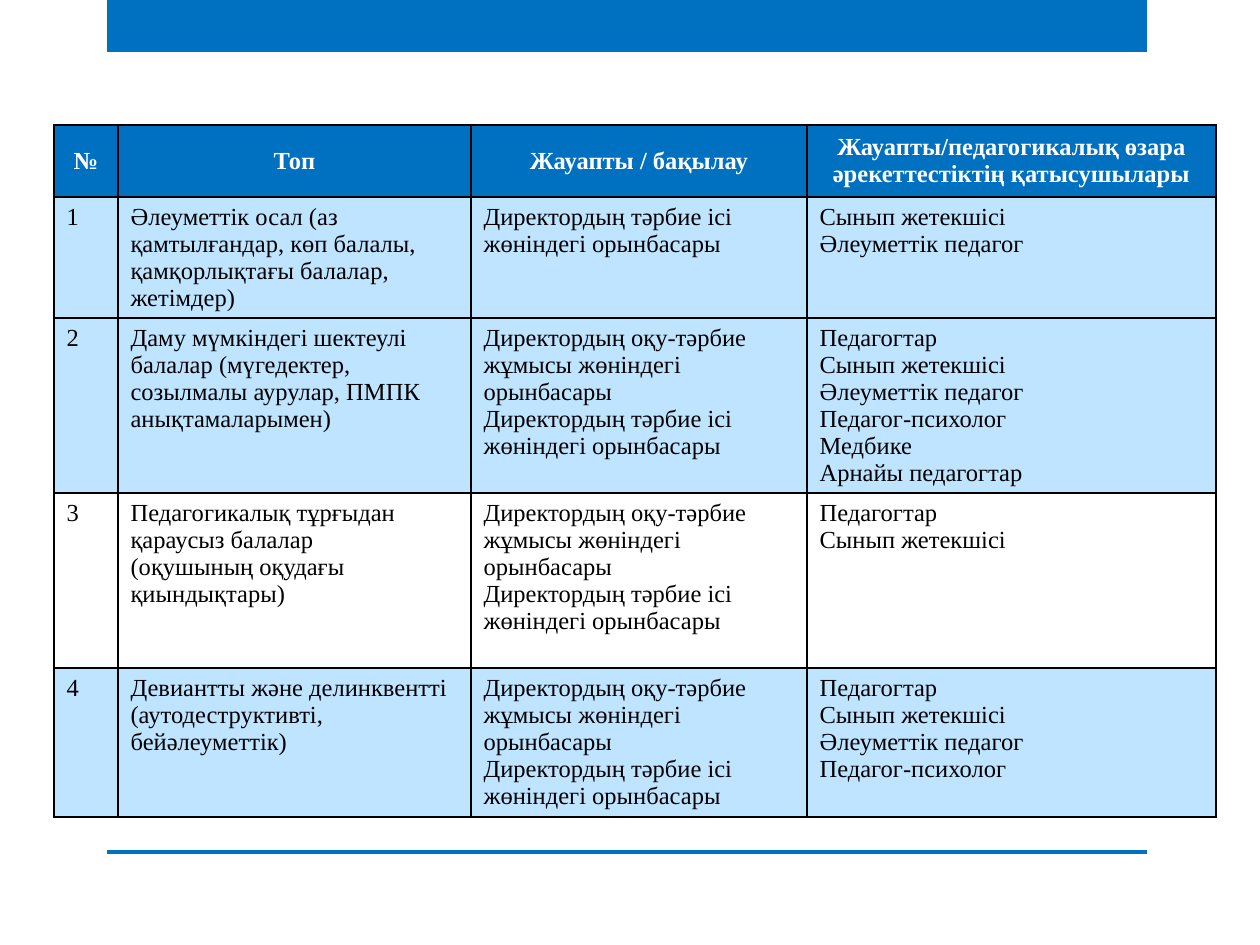
import pptx
import pptx.dml.color
import pptx.enum.shapes
import pptx.enum.text
import pptx.util
from lxml import etree

EMU_PER_PX = 914400 / 126
BLUE, PALE_BLUE, WHITE, BLACK = "0070C0", "BFE4FF", "FFFFFF", "000000"
DRAWING_NS = "http://schemas.openxmlformats.org/drawingml/2006/main"

COLUMN_WIDTHS = [64, 353, 336, 409]
ROW_HEIGHTS = [72, 121, 175, 175, 149]
ROW_FILLS = [BLUE, PALE_BLUE, PALE_BLUE, WHITE, PALE_BLUE]

# Wording shared by several rows
STUDY_DEPUTY = "Директордың оқу-тәрбие жұмысы жөніндегі орынбасары"
CARE_DEPUTY = "Директордың тәрбие ісі жөніндегі орынбасары"
BOTH_DEPUTIES = [STUDY_DEPUTY, CARE_DEPUTY]
TEACHERS = "Педагогтар"
CLASS_TEACHER = "Сынып жетекшісі"
SOCIAL_TEACHER = "Әлеуметтік педагог"
PSYCHOLOGIST = "Педагог-психолог"

# Each cell is a list of paragraphs
HEADINGS = [["№"], ["Топ"], ["Жауапты / бақылау"],
            ["Жауапты/педагогикалық өзара әрекеттестіктің қатысушылары"]]
GROUPS = [
    [["1"],
     ["Әлеуметтік осал (аз қамтылғандар, көп балалы, қамқорлықтағы балалар, жетімдер)"],
     [CARE_DEPUTY],
     [CLASS_TEACHER, SOCIAL_TEACHER]],
    [["2"],
     ["Даму мүмкіндегі шектеулі балалар (мүгедектер, созылмалы аурулар, ПМПК анықтамаларымен)"],
     BOTH_DEPUTIES,
     [TEACHERS, CLASS_TEACHER, SOCIAL_TEACHER, PSYCHOLOGIST, "Медбике", "Арнайы педагогтар"]],
    [["3"],
     ["Педагогикалық тұрғыдан қараусыз балалар", "(оқушының оқудағы қиындықтары)"],
     BOTH_DEPUTIES,
     [TEACHERS, CLASS_TEACHER]],
    [["4"],
     ["Девиантты және делинквентті (аутодеструктивті, бейәлеуметтік)"],
     BOTH_DEPUTIES,
     [TEACHERS, CLASS_TEACHER, SOCIAL_TEACHER, PSYCHOLOGIST]],
]

BODY_FONT = {"name": "Times New Roman", "size": pptx.util.Pt(14), "bold": False}
HEADING_FONT = {**BODY_FONT, "bold": True}


def px(length):
    return pptx.util.Emu(round(length * EMU_PER_PX))


def paint(target, color):
    """Give a fill or a font a solid colour."""
    if hasattr(target, "solid"):
        target.solid()
        target.fore_color.rgb = pptx.dml.color.RGBColor.from_string(color)
    else:
        target.color.rgb = pptx.dml.color.RGBColor.from_string(color)


def add_bar(slide, left, top, width, height):
    bar = slide.shapes.add_shape(pptx.enum.shapes.MSO_SHAPE.RECTANGLE,
                                 px(left), px(top), px(width), px(height))
    bar.shadow.inherit = False
    paint(bar.fill, BLUE)
    bar.line.fill.background()


def add_frame_bars(slide, left, top, width, height):
    """Thick bar at the top of the box, thin rule at its bottom."""
    thick, thin = 52, 4
    add_bar(slide, left, top, width, thick)
    add_bar(slide, left, top + height - thin, width, thin)


def outline_cell(cell):
    properties = cell._tc.get_or_add_tcPr()
    for side in ("lnL", "lnR", "lnT", "lnB"):
        border = etree.SubElement(properties, f"{{{DRAWING_NS}}}{side}",
                                  w=str(pptx.util.Pt(1)))
        solid = etree.SubElement(border, f"{{{DRAWING_NS}}}solidFill")
        etree.SubElement(solid, f"{{{DRAWING_NS}}}srgbClr", val=BLACK)


def fill_cell(cell, lines, background, is_heading):
    outline_cell(cell)
    paint(cell.fill, background)
    cell.text = "\n".join(lines)
    if is_heading:
        cell.vertical_anchor = pptx.enum.text.MSO_ANCHOR.MIDDLE
    for paragraph in cell.text_frame.paragraphs:
        if is_heading:
            paragraph.alignment = pptx.enum.text.PP_ALIGN.CENTER
        font = paragraph.runs[0].font
        for attribute, value in (HEADING_FONT if is_heading else BODY_FONT).items():
            setattr(font, attribute, value)
        paint(font, WHITE if is_heading else BLACK)


def add_groups_table(slide, left, top):
    """Table of pupil groups and the staff responsible for them."""
    rows = [HEADINGS] + GROUPS
    table = slide.shapes.add_table(len(rows), len(COLUMN_WIDTHS), px(left), px(top),
                                   px(sum(COLUMN_WIDTHS)), px(sum(ROW_HEIGHTS))).table
    for column, width in zip(table.columns, COLUMN_WIDTHS):
        column.width = px(width)
    for row, height in zip(table.rows, ROW_HEIGHTS):
        row.height = px(height)
    for r, (cells, background) in enumerate(zip(rows, ROW_FILLS)):
        for c, lines in enumerate(cells):
            fill_cell(table.cell(r, c), lines, background, is_heading=r == 0)


def main():
    presentation = pptx.Presentation()
    presentation.slide_width, presentation.slide_height = px(1260), px(945)
    slide = presentation.slides.add_slide(presentation.slide_layouts[6])
    add_frame_bars(slide, 107, 0, 1040, 854)
    add_groups_table(slide, 54, 125)
    presentation.save("out.pptx")


if __name__ == "__main__":
    main()
